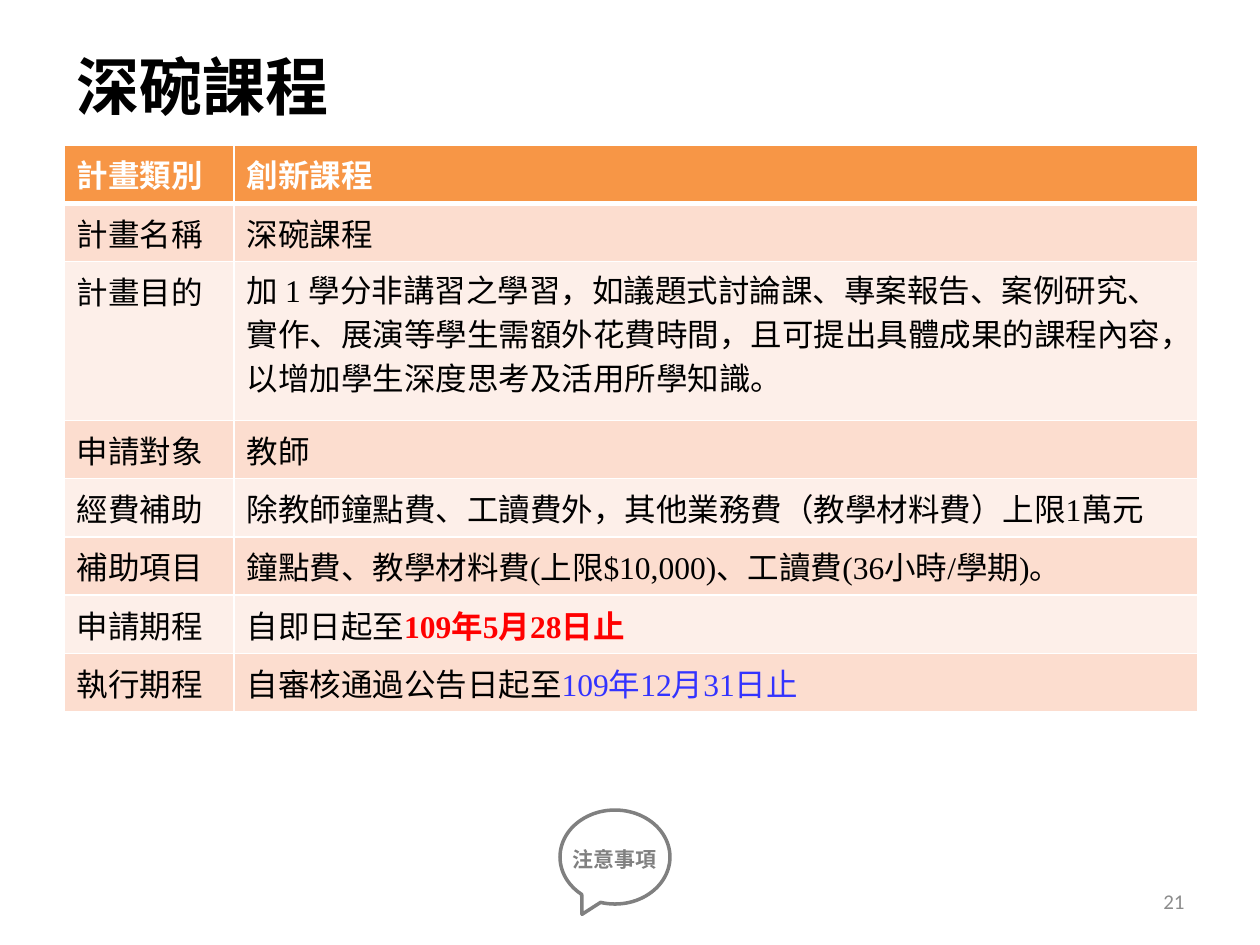
from dataclasses import dataclass

from lxml import etree
from pptx import Presentation
from pptx import util as u
from pptx.dml.color import RGBColor
from pptx.enum import shapes, text
from pptx.oxml import ns


@dataclass(frozen=True)
class Theme:
    sans: str = "Noto Sans CJK SC"
    serif: str = "Times New Roman"
    plain: str = "Calibri"
    big: int = 36
    mid: int = 18
    small: int = 12
    black: str = "000000"
    white: str = "FFFFFF"
    head: str = "F79646"
    bands: tuple = ("FDEFE9", "FCDDCF")
    red: str = "FF0000"
    blue: str = "3333FF"
    gray: str = "808080"
    pale: str = "8C8C8C"


T = Theme()

ROWS = [
    ("計畫類別", "創新課程"),
    ("計畫名稱", "深碗課程"),
    ("計畫目的", "加\u00a01\u00a0學分非講習之學習，如議題式討論課、專案報告、案例研究、"
     "實作、展演等學生需額外花費時間，且可提出具體成果的課程內容，以增加學生深度思考及活用所學知識。"),
    ("申請對象", "教師"),
    ("經費補助", "除教師鐘點費、工讀費外，其他業務費（教學材料費）上限1萬元"),
    ("補助項目", "鐘點費、教學材料費(上限$10,000)、工讀費(36小時/學期)。"),
    ("申請期程", "自即日起至"),
    ("執行期程", "自審核通過公告日起至"),
]
DATES = {6: ("109年5月28日止", T.red, True), 7: ("109年12月31日止", T.blue, False)}
GOAL = 2


def px(n):
    return u.Emu(round(n * 914400 / 126))


def area(x, y, w, h):
    return px(x), px(y), px(w), px(h)


def style(font, name, size, color, bold=False):
    font.name, font.size, font.bold = name, u.Pt(size), bold
    font.color.rgb = RGBColor.from_string(color)


def edge(cell, sides):
    props = cell._tc.get_or_add_tcPr()
    for spot, (side, width) in enumerate(sides.items()):
        line = etree.Element(ns.qn(f"a:ln{side}"), w=str(u.Pt(width)))
        fill = etree.SubElement(line, ns.qn("a:solidFill"))
        etree.SubElement(fill, ns.qn("a:srgbClr"), val=T.white)
        props.insert(spot, line)


def title(slide, x, y, w, h):
    shape = slide.shapes.title
    shape.left, shape.top, shape.width, shape.height = area(x, y, w, h)
    frame = shape.text_frame
    frame.text = "深碗課程"
    frame.vertical_anchor = text.MSO_ANCHOR.MIDDLE
    para = frame.paragraphs[0]
    para.alignment = text.PP_ALIGN.LEFT
    style(para.font, T.sans, T.big, T.black, True)


def plan(slide, x, y, w, h):
    table = slide.shapes.add_table(len(ROWS), 2, *area(x, y, w, h)).table
    label, low = 170, 54
    table.columns[0].width, table.columns[1].width = px(label), px(w - label)
    for r, row in enumerate(ROWS):
        table.rows[r].height = px(h - low * (len(ROWS) - 1) if r == GOAL else low)
        for c, words in enumerate(row):
            cell = table.cell(r, c)
            cell.fill.solid()
            cell.fill.fore_color.rgb = RGBColor.from_string(T.bands[r % 2] if r else T.head)
            edge(cell, {"L": 1, "R": 1, "T": 3 if r == 1 else 1, "B": 1 if r else 3})
            cell.text = words
            para = cell.text_frame.paragraphs[0]
            style(para.font, T.serif, T.mid, T.black if r else T.white, r == 0)
            if c and r == GOAL:
                para.line_spacing = u.Pt(25)
            if c and r in DATES:
                date, color, bold = DATES[r]
                run = para.add_run()
                run.text = date
                style(run.font, T.serif, T.mid, color, bold)


def note(slide, x, y, w, h):
    group = slide.shapes.add_group_shape()
    kind = shapes.MSO_SHAPE.OVAL_CALLOUT
    bubble = group.shapes.add_shape(kind, *area(x, y, w, h))
    bubble.adjustments[0], bubble.adjustments[1] = -0.3, 0.61
    bubble.shadow.inherit = False
    bubble.fill.background()
    bubble.line.color.rgb = RGBColor.from_string(T.gray)
    bubble.line.width = u.Pt(2)
    box = group.shapes.add_textbox(*area(x, y + 30, w, 38))
    box.text_frame.text = "注意事項"
    style(box.text_frame.paragraphs[0].font, T.sans, T.small, T.gray, True)


def page(slide, x, y, w, h):
    frame = slide.shapes.add_textbox(*area(x, y, w, h)).text_frame
    frame.word_wrap = True
    frame.vertical_anchor = text.MSO_ANCHOR.MIDDLE
    frame.text = "21"
    para = frame.paragraphs[0]
    para.alignment = text.PP_ALIGN.RIGHT
    style(para.font, T.plain, T.small, T.pale)


def main():
    deck = Presentation()
    deck.slide_width, deck.slide_height = px(1260), px(945)
    slide = deck.slides.add_slide(deck.slide_layouts[5])
    plan(slide, 64, 145, 1134, 537)
    title(slide, 64, 37, 795, 97)
    page(slide, 903, 876, 294, 50)
    note(slide, 560, 810, 110, 94)
    deck.save("out.pptx")


if __name__ == "__main__":
    main()
